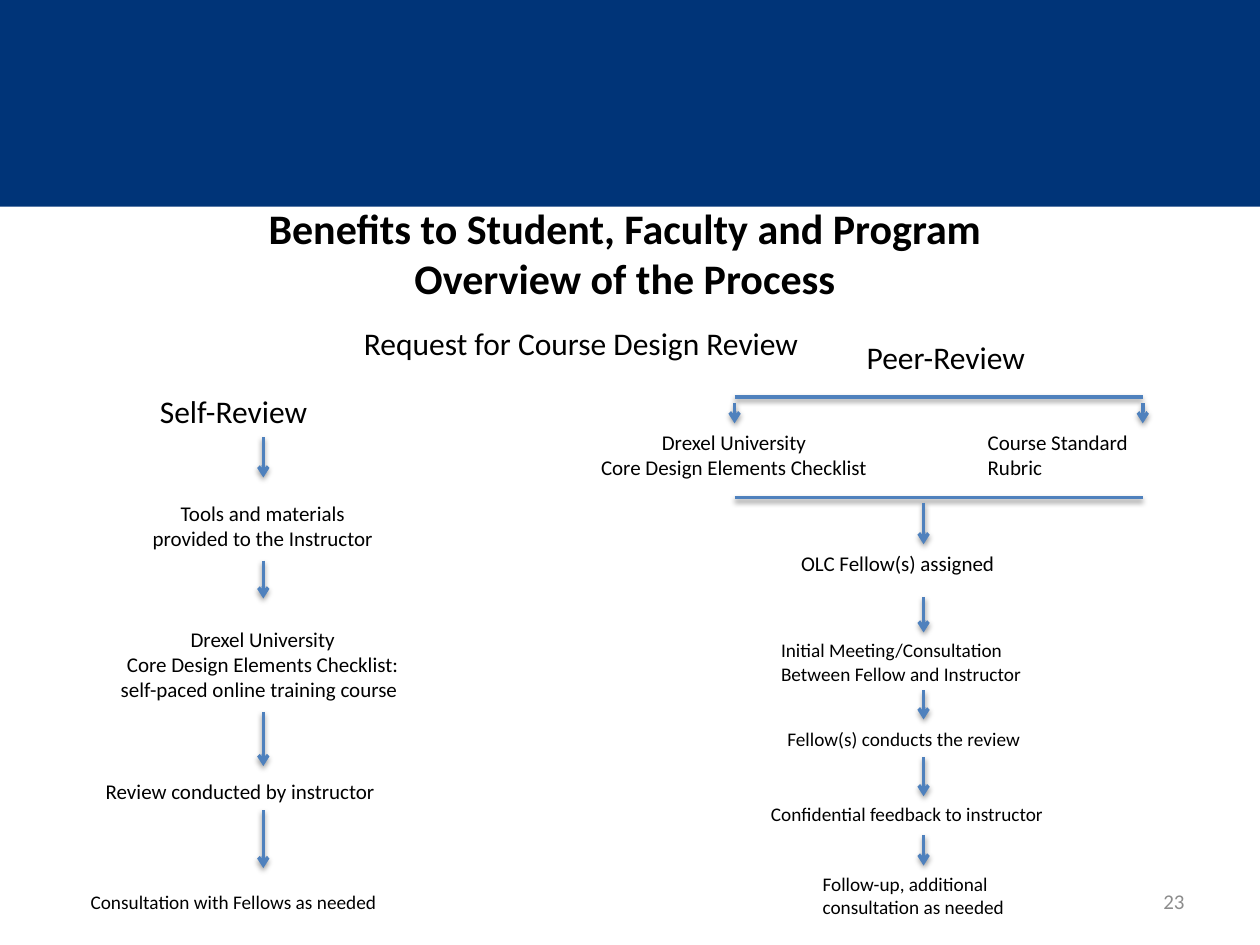
from dataclasses import dataclass

from lxml.etree import SubElement
from pptx import Presentation
from pptx.dml.color import RGBColor
from pptx.enum.shapes import MSO_CONNECTOR, MSO_SHAPE
from pptx.enum.text import MSO_ANCHOR, MSO_AUTO_SIZE, PP_ALIGN
from pptx.oxml import parse_xml
from pptx.oxml.ns import nsdecls, qn
from pptx.slide import Slide
from pptx.text.text import _Paragraph
from pptx.util import Inches, Pt

NAVY = RGBColor(0x00, 0x34, 0x78)
BLUE = RGBColor(0x4F, 0x81, 0xBD)
BLACK = RGBColor(0x00, 0x00, 0x00)
GRAY = RGBColor(0x8C, 0x8C, 0x8C)
LEFT, CENTER, RIGHT = PP_ALIGN.LEFT, PP_ALIGN.CENTER, PP_ALIGN.RIGHT

SHADOW = (
    f'<a:effectLst {nsdecls("a")}><a:outerShdw blurRad="39370" dist="20320" '
    'dir="5400000" rotWithShape="0"><a:srgbClr val="000000">'
    '<a:alpha val="38000"/></a:srgbClr></a:outerShdw></a:effectLst>'
)


@dataclass
class Label:
    lines: tuple[str, ...]
    left: float
    top: float
    width: float
    height: float
    size: int = 12
    aligns: tuple[PP_ALIGN, ...] = (LEFT, LEFT)
    color: RGBColor = BLACK


@dataclass
class Line:
    start: tuple[float, float]
    end: tuple[float, float]
    arrow: bool = True


def format_text(para: _Paragraph, size: int, color: RGBColor,
                align: PP_ALIGN, bold: bool = False) -> None:
    para.alignment = align
    values = {"name": "Calibri", "size": Pt(size), "bold": bold}
    for span in para.runs:
        for name, value in values.items():
            setattr(span.font, name, value)
        span.font.color.rgb = color


def draw_label(page: Slide, label: Label) -> None:
    box = page.shapes.add_textbox(Inches(label.left), Inches(label.top),
                                  Inches(label.width), Inches(label.height))
    frame = box.text_frame
    frame.text = "\n".join(label.lines)
    frame.word_wrap = False
    frame.auto_size = MSO_AUTO_SIZE.SHAPE_TO_FIT_TEXT
    for para, align in zip(frame.paragraphs, label.aligns):
        format_text(para, label.size, label.color, align)


def draw_line(page: Slide, line: Line) -> None:
    points = [Inches(value) for value in line.start + line.end]
    connector = page.shapes.add_connector(MSO_CONNECTOR.STRAIGHT, *points)
    connector.line.color.rgb = BLUE
    connector.line.width = Pt(2)
    if line.arrow:
        SubElement(connector.line._get_or_add_ln(), qn("a:tailEnd"), type="arrow")
    connector._element.spPr.append(parse_xml(SHADOW))


def draw_band(page: Slide) -> None:
    band = page.shapes.add_shape(MSO_SHAPE.RECTANGLE, 0, 0, Inches(10), Inches(1.64))
    band.shadow.inherit = False
    band.fill.solid()
    band.fill.fore_color.rgb = NAVY
    band.line.fill.background()
    page.shapes._spTree.insert(2, band._element)  # behind the title


def draw_title(page: Slide, text: str) -> None:
    title = page.shapes.title
    place = {"left": 0.46, "top": 1.38, "width": 9, "height": 1.25}
    for name, value in place.items():
        setattr(title, name, Inches(value))
    title.text_frame.vertical_anchor = MSO_ANCHOR.MIDDLE
    para = title.text_frame.paragraphs[0]
    para.text = text
    format_text(para, 24, BLACK, CENTER, bold=True)


def draw_page_number(page: Slide, number: int) -> None:
    box = page.shapes.add_textbox(Inches(7.17), Inches(6.95), Inches(2.33), Inches(0.4))
    box.text_frame.word_wrap = True
    box.text_frame.vertical_anchor = MSO_ANCHOR.MIDDLE
    box.text_frame.text = str(number)
    format_text(box.text_frame.paragraphs[0], 12, GRAY, RIGHT)


LABELS = [
    # Headings
    Label(("Request for Course Design Review",), 2.79, 2.52, 3.72, 0.41, 18),
    Label(("Self-Review",), 1.17, 3.06, 1.41, 0.41, 18),
    Label(("Peer-Review",), 6.78, 2.63, 1.51, 0.41, 18),
    # Self-review steps
    Label(("Tools and materials", "provided to the Instructor"),
          1.09, 3.92, 1.99, 0.51, aligns=(CENTER, CENTER)),
    Label(("Drexel University", "Core Design Elements Checklist:",
           "self-paced online training course"),
          0.86, 4.92, 2.45, 0.71, aligns=(CENTER, CENTER, LEFT)),
    Label(("Review conducted by instructor",), 0.74, 6.13, 2.39, 0.31),
    Label(("Consultation with Fellows as needed",), 0.62, 7.02, 2.51, 0.29, 11),
    # Peer-review steps
    Label(("Drexel University", "Core Design Elements Checklist"),
          4.65, 3.36, 2.35, 0.51, aligns=(CENTER, CENTER)),
    Label(("Course Standard Rubric",), 7.74, 3.36, 1.76, 0.31),
    Label(("OLC Fellow(s) assigned",), 6.26, 4.32, 1.77, 0.31),
    Label(("Initial Meeting/Consultation", "Between Fellow and Instructor"),
          6.1, 5.02, 2.15, 0.48, 11),
    Label(("Fellow(s) conducts the review",), 6.15, 5.72, 2.09, 0.29, 11),
    Label(("Confidential feedback to instructor",), 6.02, 6.32, 2.41, 0.29, 11),
    Label(("Follow-up, additional", "consultation as needed"),
          6.43, 6.87, 1.67, 0.48, 11),
]

# Vertical arrows: x position and the (top, bottom) of each arrow on it
ARROWS = {
    2.09: [(3.47, 3.79), (4.45, 4.75), (5.65, 6.08), (6.43, 6.89)],
    5.83: [(3.2, 3.36)],
    9.07: [(3.2, 3.36)],
    7.33: [(3.99, 4.32), (4.74, 5.02), (5.48, 5.71), (6.01, 6.32), (6.63, 6.87)],
}
BARS = [3.15, 3.95]


def main() -> None:
    deck = Presentation()
    deck.slide_width, deck.slide_height = Inches(10), Inches(7.5)
    page = deck.slides.add_slide(deck.slide_layouts[5])

    # Header
    draw_band(page)
    draw_title(page, "Benefits to Student, Faculty and Program\vOverview of the Process")

    # Flow text
    for label in LABELS:
        draw_label(page, label)

    # Flow lines
    for y in BARS:
        draw_line(page, Line((5.83, y), (9.07, y), arrow=False))
    for x, spans in ARROWS.items():
        for top, bottom in spans:
            draw_line(page, Line((x, top), (x, bottom)))

    draw_page_number(page, 23)
    deck.save("out.pptx")


if __name__ == "__main__":
    main()
